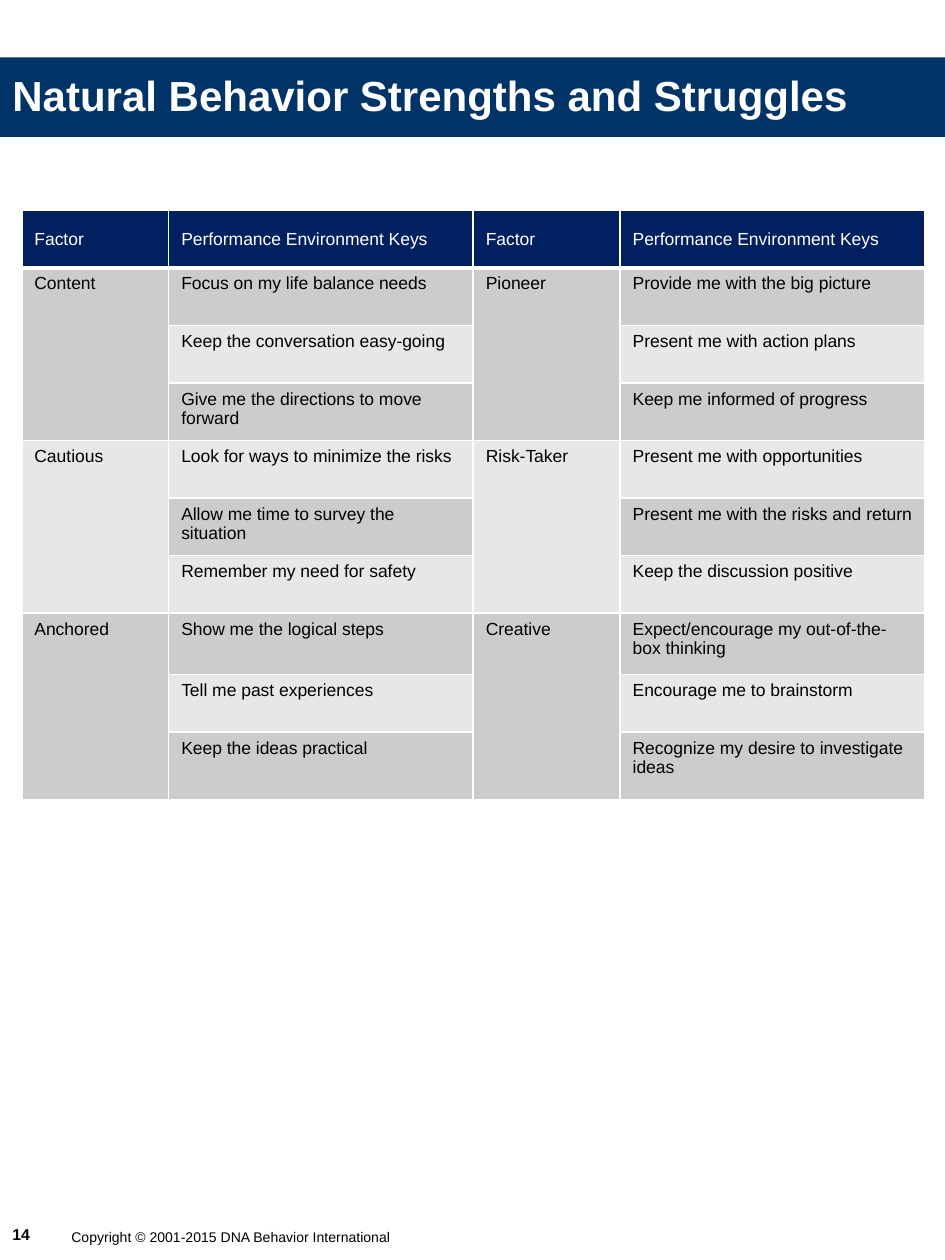
"""Build a page with a table of natural behavior strengths and struggles."""
from dataclasses import dataclass

from lxml.etree import SubElement
from pptx import Presentation
from pptx.dml.color import RGBColor
from pptx.enum.shapes import MSO_SHAPE as Shape
from pptx.enum.text import MSO_ANCHOR as Anchor
from pptx.oxml.ns import qn
from pptx.util import Cm, Pt

COLORS = {
    "band": "003366",
    "header": "002060",
    "dark": "CCCCCC",
    "light": "E7E7E7",
    "white": "FFFFFF",
    "ink": "050000",
    "black": "000000",
}
FONT = "Arial"
PAGE_WIDTH, PAGE_HEIGHT = 19.05, 25.4
COLUMN_WIDTHS = [2.96, 6.14] * 2
ROW_HEIGHTS = [1.16] * 7 + [1.24, 1.16, 1.37]
HEADINGS = ["Factor", "Performance Environment Keys"] * 2
HEADER_BORDERS = {"lnL": 1, "lnR": 1, "lnT": 1, "lnB": 3}


@dataclass(frozen=True)
class Factor:
    name: str
    keys: tuple[str, ...]


@dataclass(frozen=True)
class Label:
    text: str
    left: float
    top: float
    width: float
    height: float
    size: float
    color: str
    bold: bool = False
    wrap: bool = True
    anchor: Anchor = Anchor.MIDDLE


FACTOR_PAIRS = [
    (
        Factor("Content", (
            "Focus on my life balance needs",
            "Keep the conversation easy-going",
            "Give me the directions to move forward",
        )),
        Factor("Pioneer", (
            "Provide me with the big picture",
            "Present me with action plans",
            "Keep me informed of progress",
        )),
    ),
    (
        Factor("Cautious", (
            "Look for ways to minimize the risks",
            "Allow me time to survey the situation",
            "Remember my need for safety",
        )),
        Factor("Risk-Taker", (
            "Present me with opportunities",
            "Present me with the risks and return",
            "Keep the discussion positive",
        )),
    ),
    (
        Factor("Anchored", (
            "Show me the logical steps",
            "Tell me past experiences",
            "Keep the ideas practical",
        )),
        Factor("Creative", (
            "Expect/encourage my out-of-the-box thinking",
            "Encourage me to brainstorm",
            "Recognize my desire to investigate ideas",
        )),
    ),
]

FOOTER_LABELS = [
    Label("14", 0, 24.56, 1.35, 0.64, 9, "black", bold=True),
    Label("Copyright © 2001-2015 DNA Behavior International",
          1.19, 24.64, 7.06, 0.6, 8, "black", wrap=False),
]
TITLE = Label("Natural Behavior Strengths and Struggles",
              0, 1.27, PAGE_WIDTH, 1.27, 24, "white", bold=True, anchor=Anchor.TOP)


def rgb(color: str) -> RGBColor:
    return RGBColor.from_string(COLORS[color])


def write_text(frame, text: str, size: float, color: str, bold: bool = False) -> None:
    frame.text = text
    for span in frame.paragraphs[0].runs:
        span.font.name = FONT
        span.font.size = Pt(size)
        span.font.bold = bold
        span.font.color.rgb = rgb(color)


def add_label(page, label: Label) -> None:
    box = page.shapes.add_textbox(
        Cm(label.left), Cm(label.top), Cm(label.width), Cm(label.height))
    frame = box.text_frame
    frame.word_wrap = label.wrap
    frame.vertical_anchor = label.anchor
    write_text(frame, label.text, label.size, label.color, label.bold)


def add_band(page) -> None:
    band = page.shapes.add_shape(
        Shape.RECTANGLE, 0, Cm(1.16), Cm(PAGE_WIDTH), Cm(1.6))
    band.shadow.inherit = False
    band.fill.solid()
    band.fill.fore_color.rgb = rgb("band")
    band.line.fill.background()


def add_header_borders(cell) -> None:
    properties = cell._tc.get_or_add_tcPr()
    for side, points in HEADER_BORDERS.items():
        line = SubElement(properties, qn(f"a:{side}"), w=str(Pt(points)))
        fill = SubElement(line, qn("a:solidFill"))
        SubElement(fill, qn("a:srgbClr"), val=COLORS["white"])


def fill_cell(cell, text: str, fill: str, color: str = "ink") -> None:
    cell.fill.solid()
    cell.fill.fore_color.rgb = rgb(fill)
    write_text(cell.text_frame, text, 10, color)


def add_factor(table, factor: Factor, first_row: int, column: int) -> None:
    for row, key in enumerate(factor.keys, first_row):
        shade = "dark" if row % 2 else "light"
        name = factor.name if row == first_row else ""
        fill_cell(table.cell(row, column), name, shade)
        fill_cell(table.cell(row, column + 1), key, shade)
    last_row = first_row + len(factor.keys) - 1
    table.cell(first_row, column).merge(table.cell(last_row, column))


def add_factor_table(page) -> None:
    table = page.shapes.add_table(
        len(ROW_HEIGHTS), len(COLUMN_WIDTHS), Cm(0.44), Cm(4.24),
        Cm(sum(COLUMN_WIDTHS)), Cm(sum(ROW_HEIGHTS))).table
    for column, width in zip(table.columns, COLUMN_WIDTHS):
        column.width = Cm(width)
    for row, height in zip(table.rows, ROW_HEIGHTS):
        row.height = Cm(height)
    for cell, heading in zip(table.rows[0].cells, HEADINGS):
        add_header_borders(cell)
        fill_cell(cell, heading, "header", "white")
        cell.vertical_anchor = Anchor.MIDDLE
    for group, pair in enumerate(FACTOR_PAIRS):
        for side, factor in enumerate(pair):
            add_factor(table, factor, 1 + 3 * group, 2 * side)


def main() -> None:
    deck = Presentation()
    deck.slide_width, deck.slide_height = Cm(PAGE_WIDTH), Cm(PAGE_HEIGHT)
    page = deck.slides.add_slide(deck.slide_layouts[6])
    for label in FOOTER_LABELS:
        add_label(page, label)
    add_band(page)
    add_factor_table(page)
    add_label(page, TITLE)
    deck.save("out.pptx")


if __name__ == "__main__":
    main()
